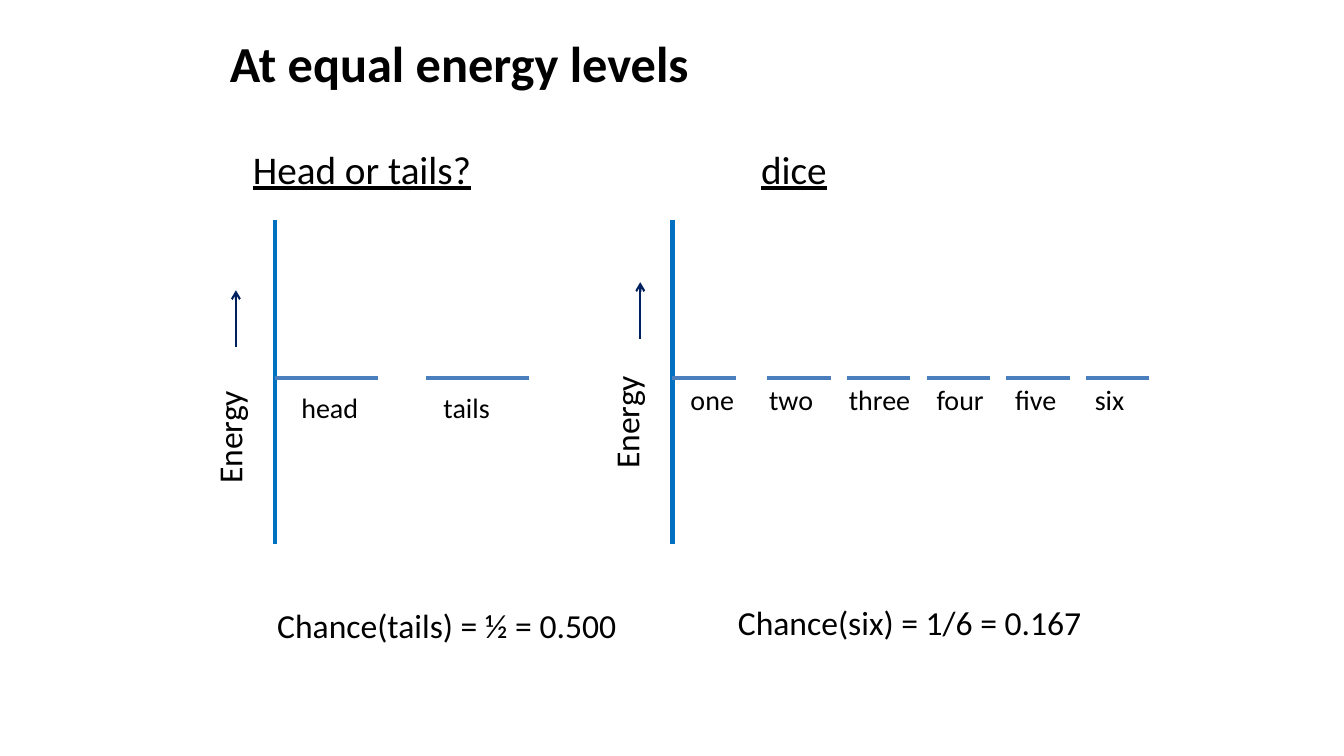
import dataclasses

import pptx
import pptx.dml.color
import pptx.enum.shapes
import pptx.enum.text
import pptx.oxml
import pptx.util
from pptx.util import Inches


@dataclasses.dataclass(frozen=True)
class Theme:
    font: str = "Calibri"
    ink: str = "000000"
    axis: str = "0070C0"
    level: str = "4B7EBC"
    arrow: str = "002060"
    title: int = 36
    head: int = 28
    body: int = 24
    label: int = 20


def color(code):
    return pptx.dml.color.RGBColor.from_string(code)


def write(frame, text, size, theme, bold=False, under=False,
          anchor=pptx.enum.text.MSO_ANCHOR.TOP):
    frame.word_wrap = True
    frame.vertical_anchor = anchor
    para = frame.paragraphs[0]
    para.alignment = pptx.enum.text.PP_ALIGN.LEFT
    run = para.add_run()
    run.text = text
    font = run.font
    font.name = theme.font
    font.size = pptx.util.Pt(size)
    font.bold = bold
    font.underline = under
    font.color.rgb = color(theme.ink)


class Board:
    def __init__(self, slide, theme):
        self.slide = slide
        self.theme = theme
        self.shapes = slide.shapes

    def group(self):
        self.shapes = self.slide.shapes.add_group_shape().shapes

    def title(self, text, left, top, width, height):
        shape = self.slide.shapes.title
        shape.left, shape.top = Inches(left), Inches(top)
        shape.width, shape.height = Inches(width), Inches(height)
        write(shape.text_frame, text, self.theme.title, self.theme,
              bold=True, anchor=pptx.enum.text.MSO_ANCHOR.MIDDLE)

    def text(self, text, left, top, width, height, size, turn=False, under=False):
        box = self.shapes.add_textbox(
            Inches(left), Inches(top), Inches(width), Inches(height))
        write(box.text_frame, text, size, self.theme, under=under)
        if turn:
            box.text_frame._txBody.bodyPr.set("vert", "vert270")

    def line(self, start, end, hue, weight, arrow=False):
        line = self.shapes.add_connector(
            pptx.enum.shapes.MSO_CONNECTOR.STRAIGHT,
            Inches(start[0]), Inches(start[1]), Inches(end[0]), Inches(end[1]))
        line.line.color.rgb = color(hue)
        line.line.width = pptx.util.Pt(weight)
        props = line._element.spPr
        if arrow:
            tail = pptx.oxml.parse_xml(
                '<a:tailEnd xmlns:a="http://schemas.openxmlformats.org/'
                'drawingml/2006/main" type="arrow"/>')
            line.line._get_or_add_ln().append(tail)
        props.append(pptx.oxml.parse_xml(
            '<a:effectLst xmlns:a="http://schemas.openxmlformats.org/'
            'drawingml/2006/main"/>'))

    def axis(self, x, arrow, label):
        theme = self.theme
        self.line((x, 2.18), (x, 5.4), theme.axis, 3)
        self.text("Energy", *label, 0.61, 1.31, theme.body, turn=True)
        left, base = arrow
        self.line((left, base), (left, base - 0.56), theme.arrow, 1.5, arrow=True)

    def levels(self, items, span, top):
        for name, start, left, width in items:
            self.line((start, 3.75), (start + span, 3.75), self.theme.level, 2.25)
            self.text(name, left, top, width, 0.44, self.theme.label)


def main():
    deck = pptx.Presentation()
    deck.slide_width, deck.slide_height = Inches(13.33), Inches(7.5)
    theme = Theme()
    board = Board(deck.slides.add_slide(deck.slide_layouts[5]), theme)

    board.title("At equal energy levels", 2.18, 0, 8.99, 1.24)

    board.text("Head or tails?", 2.41, 1.39, 2.52, 0.57, theme.head, under=True)
    board.axis(2.73, (2.34, 3.44), (2.02, 3.59))
    coin = [("head", 2.73, 2.89, 0.87), ("tails", 4.23, 4.3, 0.81)]
    board.levels(coin, 1.02, 3.83)
    board.text("Chance(tails) = ½ = 0.500", 2.65, 5.95, 3.78, 0.5, theme.body)

    board.group()
    board.text("dice", 7.45, 1.39, 2.52, 0.57, theme.head, under=True)
    board.axis(6.67, (6.35, 3.36), (5.96, 3.44))
    names = ["two", "three", "four", "five", "six"]
    starts = [7.61 + 0.79 * step for step in range(len(names))]
    lefts = [7.53, 8.32, 9.19, 9.97, 10.76]
    widths = [0.87, 0.87, 0.71, 0.63, 0.63]
    dice = [("one", 6.67, 6.75, 0.71), *zip(names, starts, lefts, widths)]
    board.levels(dice, 0.63, 3.75)
    board.text("Chance(six) = 1/6 = 0.167", 7.22, 5.92, 3.94, 0.5, theme.body)

    deck.save("out.pptx")


if __name__ == "__main__":
    main()
